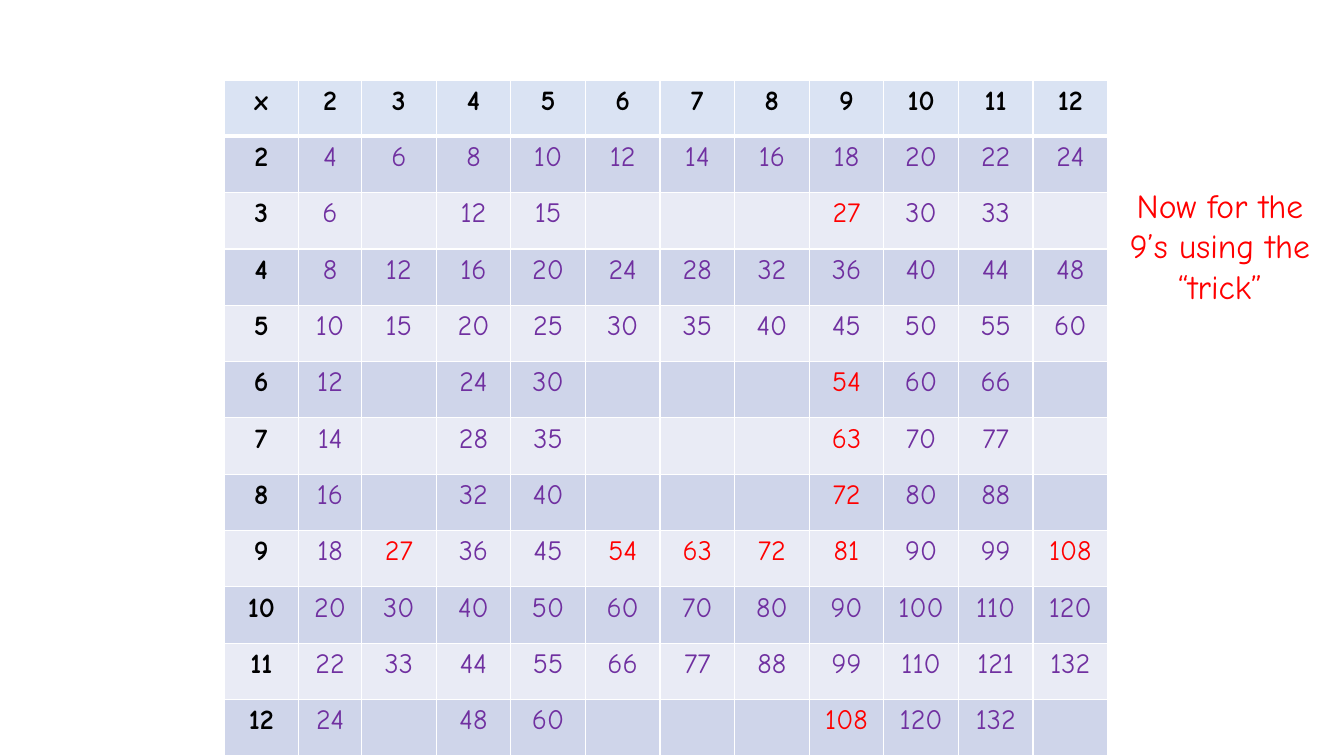
from lxml.etree import SubElement
from pptx import Presentation
from pptx.dml.color import RGBColor
from pptx.enum.text import MSO_AUTO_SIZE, PP_ALIGN
from pptx.oxml.ns import qn
from pptx.util import Emu, Pt

EMU_PER_PX = 914400 / 100.8
FONT = "Comic Neue"
BLACK = RGBColor(0x00, 0x00, 0x00)
PURPLE = RGBColor(0x70, 0x30, 0xA0)
RED = RGBColor(0xFF, 0x00, 0x00)
WHITE = RGBColor(0xFF, 0xFF, 0xFF)
HEADER_FILL = RGBColor(0xDA, 0xE3, 0xF3)
BAND_FILLS = (RGBColor(0xE9, 0xEB, 0xF5), RGBColor(0xCF, 0xD5, 0xEA))
FACTORS = range(2, 13)
LEARNED = {2, 4, 5, 10, 11}
NEW_FACTOR = 9


def px(n):
    """Turn pixels into EMU."""
    return Emu(round(n * EMU_PER_PX))


def write(tf, text, size, color, bold=False):
    """Fill a text frame with one centred paragraph."""
    tf.text = text
    p = tf.paragraphs[0]
    p.alignment = PP_ALIGN.CENTER
    font = p.runs[0].font
    font.name, font.size, font.bold = FONT, Pt(size), bold
    font.color.rgb = color


def set_borders(cell, top, bottom):
    """Draw white borders, with the given top and bottom widths in points."""
    tc_pr = cell._tc.get_or_add_tcPr()
    for side, width in (("L", 1), ("R", 1), ("T", top), ("B", bottom)):
        ln = SubElement(tc_pr, qn(f"a:ln{side}"), w=str(Pt(width)))
        SubElement(SubElement(ln, qn("a:solidFill")), qn("a:srgbClr"), val=str(WHITE))


def product_color(a, b):
    """Return the colour of a product, or None while it is still unknown."""
    if LEARNED & {a, b}:
        return PURPLE
    return RED if NEW_FACTOR in (a, b) else None


def add_times_table(slide, left, top, width, height):
    """Add the multiplication grid in the given box."""
    labels = ["x", *FACTORS]
    n = len(labels)
    narrow = 63
    table = slide.shapes.add_table(n, n, px(left), px(top), px(width), px(height)).table
    for i in range(n):
        table.columns[i].width = px(narrow if i == 1 else (width - narrow) / (n - 1))
        table.rows[i].height = px(height / n)
    for i, a in enumerate(labels):
        for j, b in enumerate(labels):
            cell = table.cell(i, j)
            set_borders(cell, 3 if i == 1 else 1, 3 if i == 0 else 1)
            cell.fill.solid()
            cell.fill.fore_color.rgb = BAND_FILLS[i % 2] if i else HEADER_FILL
            if i == 0 or j == 0:
                write(cell.text_frame, str(a if j == 0 else b), 20, BLACK, True)
            elif color := product_color(a, b):
                write(cell.text_frame, str(a * b), 20, color)


def add_hint(slide, left, top, width, height):
    """Add the red hint beside the grid."""
    tf = slide.shapes.add_textbox(px(left), px(top), px(width), px(height)).text_frame
    tf.word_wrap = True
    tf.auto_size = MSO_AUTO_SIZE.SHAPE_TO_FIT_TEXT
    write(tf, "Now for the 9’s using the “trick”", 24, RED)


def main():
    """Build and save the slide."""
    prs = Presentation()
    prs.slide_width, prs.slide_height = px(1344), px(756)
    slide = prs.slides.add_slide(prs.slide_layouts[6])
    add_times_table(slide, 224, 80, 884, 676)
    add_hint(slide, 1120, 180, 200, 173)
    prs.save("out.pptx")


if __name__ == "__main__":
    main()
